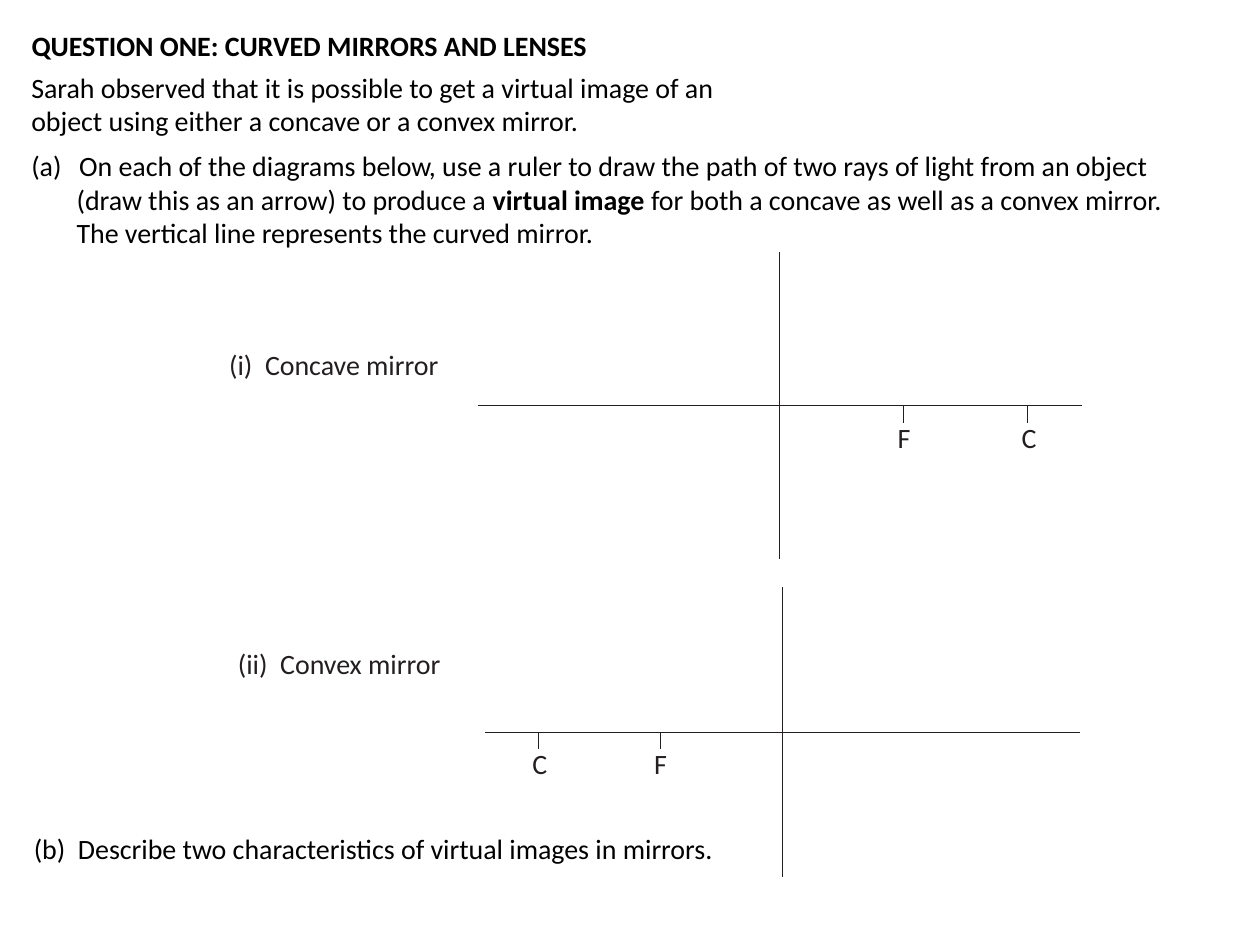
from lxml.etree import SubElement
from pptx import Presentation
from pptx.dml.color import RGBColor
from pptx.enum.shapes import MSO_CONNECTOR as Link
from pptx.enum.text import MSO_ANCHOR as Anchor, PP_ALIGN as Align
from pptx.oxml.ns import qn
from pptx.util import Inches, Pt

BLACK = RGBColor(0, 0, 0)
INK = RGBColor(0x23, 0x1F, 0x20)
FONT = "Calibri"
SIZE = Pt(16)
WIDE, HIGH = 10, 7.5
FOCUS = 0.205
TICK = 0.057


def add_run(para, text, color=BLACK, bold=False):
    run = para.add_run()
    run.text = text
    font = run.font
    font.name, font.size, font.bold = FONT, SIZE, bold
    font.color.rgb = color


def set_indent(para, left, first=0):
    props = para._p.get_or_add_pPr()
    props.set("marL", str(Inches(left)))
    props.set("indent", str(Inches(first)))
    return props


def add_box(slide, box):
    frame = slide.shapes.add_textbox(*map(Inches, box)).text_frame
    frame.word_wrap = True
    return frame


def add_line(slide, *ends):
    line = slide.shapes.add_connector(Link.STRAIGHT, *map(Inches, ends))
    line.line.color.rgb = INK
    line.line.width = Pt(0.5)
    SubElement(line._element.spPr, qn("a:effectLst"))


def add_title(slide, box, text):
    title = slide.shapes.title
    title.left, title.top, title.width, title.height = map(Inches, box)
    frame = title.text_frame
    frame.word_wrap = True
    frame.vertical_anchor = Anchor.TOP
    para = frame.paragraphs[0]
    para.alignment = Align.LEFT
    add_run(para, text, bold=True)


def add_text(slide, box, text, color=BLACK, indent=0):
    para = add_box(slide, box).paragraphs[0]
    set_indent(para, indent)
    add_run(para, text, color)


def add_task(slide, box, lines):
    frame = add_box(slide, box)
    for row, runs in enumerate(lines):
        para = frame.add_paragraph() if row else frame.paragraphs[0]
        if row:
            set_indent(para, 0.36)
        else:
            props = set_indent(para, 0.38, -0.38)
            SubElement(props, qn("a:buFont"), typeface="+mj-lt")
            SubElement(props, qn("a:buAutoNum"), type="alphaLcParenBoth")
        for text, bold in runs:
            add_run(para, text, bold=bold)


def add_mirror(slide, box, side):
    left, top, width, height = box
    mid, axis = left + width / 2, top + height / 2
    add_line(slide, left, axis, left + width, axis)
    add_line(slide, mid, top, mid, top + height)
    for step, name in enumerate("FC", 1):
        x = mid + side * step * FOCUS * width
        foot = axis + TICK * height
        add_line(slide, x, axis, x, foot)
        frame = add_box(slide, (x - 0.05, foot - 0.02, 0.1, 0.19))
        frame.word_wrap = False
        frame.margin_left = frame.margin_right = 0
        frame.margin_top = frame.margin_bottom = 0
        para = frame.paragraphs[0]
        para.alignment = Align.CENTER
        add_run(para, name, INK)


def main():
    deck = Presentation()
    deck.slide_width, deck.slide_height = Inches(WIDE), Inches(HIGH)
    slide = deck.slides.add_slide(deck.slide_layouts[5])
    add_title(slide, (0.15, 0.18, 5, 0.37),
              "QUESTION ONE: CURVED MIRRORS AND LENSES")
    add_text(slide, (0.15, 0.51, 6.09, 0.64),
             "Sarah observed that it is possible to get a virtual image of an "
             "object using either a concave or a convex mirror.")
    add_task(slide, (0.15, 1.13, 9.64, 0.91), [
        [("On each of the diagrams below, use a ruler to draw the path of "
          "two rays of light from an object", False)],
        [("(draw this as an arrow) to produce a ", False),
         ("virtual image ", True),
         ("for both a concave as well as a convex mirror.", False)],
        [("The vertical line represents the curved mirror.", False)],
    ])
    add_mirror(slide, (3.79, 2, 4.8, 2.44), 1)
    add_mirror(slide, (3.85, 4.66, 4.72, 2.3), -1)
    add_text(slide, (1.22, 2.71, 2.5, 0.37), "(i)  Concave mirror", INK, 0.5)
    add_text(slide, (1.29, 5.08, 3.76, 0.37), "(ii)  Convex mirror", INK, 0.5)
    add_text(slide, (0.17, 6.55, 5.86, 0.37),
             "(b)  Describe two characteristics of virtual images in mirrors.")
    deck.save("out.pptx")


if __name__ == "__main__":
    main()
